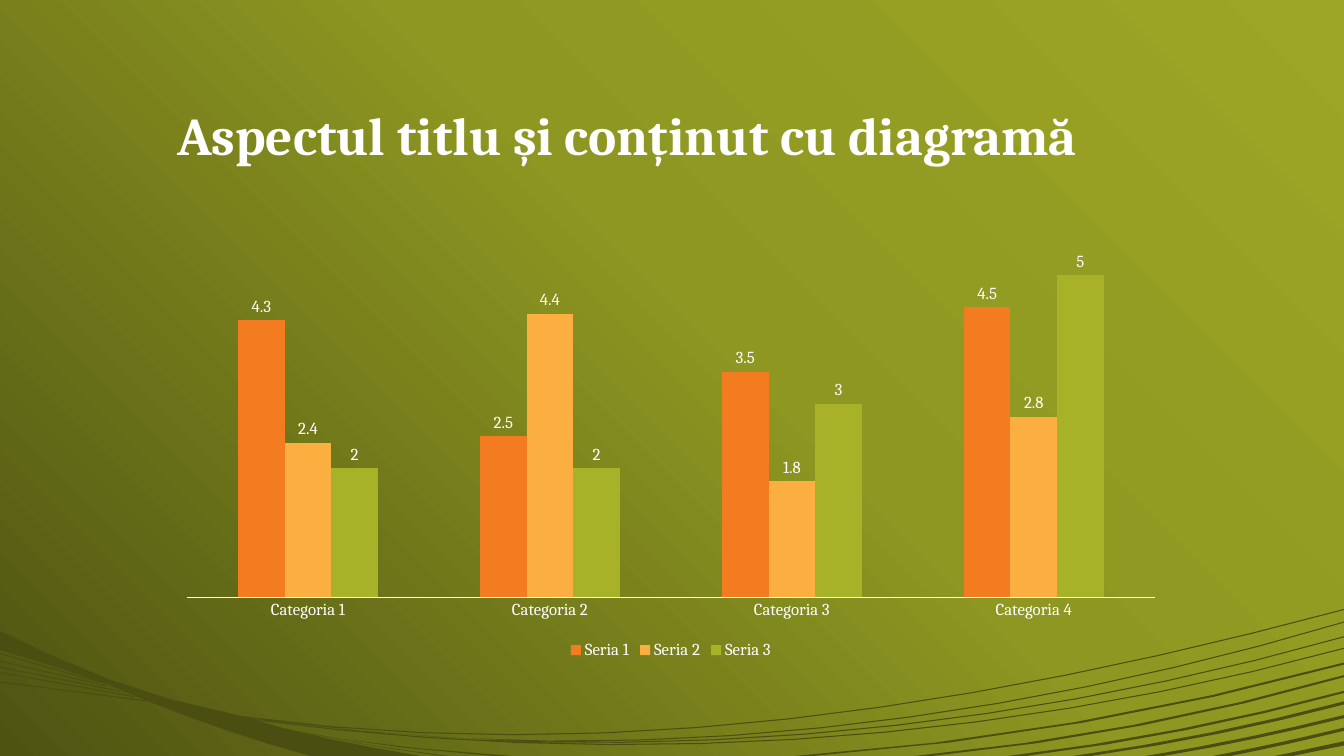
import copy

import pptx
import pptx.chart.data
import pptx.dml.color
import pptx.enum.chart
import pptx.enum.text
import pptx.oxml.ns
import pptx.util

PX = 9525
WIDTH, HEIGHT = 1280, 720
FINE = 100
FONT = "Cambria"
WHITE = "FFFFFF"
WAVE = "4A4E11"
BACKDROP = [(0, "9DA625"), (0.45, "8E9721"), (1, "4E5312")]
CATEGORIES = ["Categoria 1", "Categoria 2", "Categoria 3", "Categoria 4"]
SERIES = [
    ("Seria 1", (4.3, 2.5, 3.5, 4.5), "F37B20"),
    ("Seria 2", (2.4, 4.4, 1.8, 2.8), "FAAF40"),
    ("Seria 3", (2, 2, 3, 5), "A8B228"),
]
CORNER_STRANDS = [(1214, 706, 4), (1155, 693, 3), (1091, 681, 3), (1022, 668, 3),
                  (960, 658, 2), (871, 643, 2), (757, 631, 2)]
LONG_STRANDS = [(230, 682, 580), (265, 687, 592), (248, 685, 606), (235, 684, 617)]
LEFT_STRANDS = [(622, 98, 650), (629, 102, 653), (635, 115, 658), (640, 128, 663), (649, 139, 667)]
LOWER_STRANDS = [(421, 6), (470, 18)]


def rgb(code):
    """Turn a hex string into a colour."""
    return pptx.dml.color.RGBColor.from_string(code)


def px(length):
    """Turn a length in px into EMU."""
    return pptx.util.Emu(length * PX)


def style_font(font, size):
    """Give a font the slide's typeface and colour."""
    font.name = FONT
    font.size = pptx.util.Pt(size)
    font.color.rgb = rgb(WHITE)


def curve(start, first, second, end, steps=4):
    """List the points along a cubic curve."""
    points = []
    for step in range(steps + 1):
        t = step / steps
        weights = ((1 - t) ** 3, 3 * t * (1 - t) ** 2, 3 * t * t * (1 - t), t ** 3)
        points.append(tuple(sum(w * p[axis] for w, p in zip(weights, (start, first, second, end)))
                            for axis in (0, 1)))
    return points


def add_bands(slide, bands):
    """Fill, as one shape, the areas between pairs of edges that run left to right."""
    outlines = [[(x * FINE, y * FINE) for x, y in upper + lower[::-1]] for upper, lower in bands]
    builder = slide.shapes.build_freeform(*outlines[0][0], scale=PX / FINE)
    builder.add_line_segments(outlines[0][1:], close=True)
    for outline in outlines[1:]:
        builder.move_to(*outline[0])
        builder.add_line_segments(outline[1:], close=True)
    wave = builder.convert_to_shape()
    wave.shadow.inherit = False
    wave.fill.solid()
    wave.fill.fore_color.rgb = rgb(WAVE)
    wave.line.fill.background()


def corner_edge(foot, edge):
    """Run a curve from the bottom of the slide up to its right side."""
    run, rise = WIDTH - foot, HEIGHT - edge
    bend = 0.36 - rise / 400
    return curve((foot, HEIGHT), (foot + 0.34 * run, HEIGHT - bend * rise),
                 (foot + 0.68 * run, HEIGHT - (bend + 0.35) * rise), (WIDTH, edge))


def long_edge(x, y, edge):
    """Run a shallow curve from the wedge to the right side."""
    return curve((x, y), (x + 342, y + 47), (x + 696, edge + 95), (WIDTH, edge), steps=12)


def lower_edge(foot):
    """Run a curve from the wedge down to the bottom of the slide."""
    return curve((211, 681), (280, 698), (350, 711), (foot, HEIGHT))


def add_waves(slide):
    """Draw the wedge and the strands along the foot of the slide."""
    strands = [(corner_edge(foot, edge), corner_edge(foot + 17, edge + depth))
               for foot, edge, depth in CORNER_STRANDS]
    strands += [(long_edge(x, y, edge), long_edge(x, y + 1, edge + 1))
                for x, y, edge in LONG_STRANDS]
    strands += [([(0, edge), (x, y)], [(0, edge + 1), (x, y + 1)])
                for edge, x, y in LEFT_STRANDS]
    strands += [(lower_edge(foot + breadth), lower_edge(foot))
                for foot, breadth in LOWER_STRANDS]
    add_bands(slide, strands)
    crest = curve((0, 601), (72, 636), (133, 663), (230, 682))
    crest += curve((230, 682), (280, 698), (340, 710), (401, HEIGHT))[1:]
    base = curve((0, 619), (50, 634), (98, 648), (141, 668))
    base += curve((141, 668), (192, 688), (243, 706), (296, HEIGHT))[1:]
    add_bands(slide, [(crest, base)])


def paint_background(slide):
    """Fill the background with a diagonal three-stop gradient."""
    fill = slide.background.fill
    fill.gradient()
    fill.gradient_angle = 225
    stops = slide.element.find(".//" + pptx.oxml.ns.qn("a:gsLst"))
    stops.append(copy.deepcopy(stops[0]))
    for stop, (position, code) in zip(fill.gradient_stops, BACKDROP):
        stop.position = position
        stop.color.rgb = rgb(code)


def place_title(slide, left, top, width, height):
    """Set the title into its box."""
    title = slide.shapes.title
    title.left, title.top, title.width, title.height = map(px, (left, top, width, height))
    frame = title.text_frame
    frame.text = "Aspectul titlu și conținut cu diagramă"
    frame.word_wrap = True
    frame.auto_size = pptx.enum.text.MSO_AUTO_SIZE.NONE
    frame.vertical_anchor = pptx.enum.text.MSO_ANCHOR.BOTTOM
    heading = frame.paragraphs[0]
    heading.alignment = pptx.enum.text.PP_ALIGN.LEFT
    heading.line_spacing = 0.9
    style_font(heading.font, 38)
    heading.font.bold = True


def place_chart(slide, left, top, width, height):
    """Draw the clustered columns in their box."""
    data = pptx.chart.data.CategoryChartData()
    data.categories = CATEGORIES
    for name, values, _ in SERIES:
        data.add_series(name, values)
    chart = slide.shapes.add_chart(pptx.enum.chart.XL_CHART_TYPE.COLUMN_CLUSTERED,
                                   *map(px, (left, top, width, height)), data).chart
    style_font(chart.font, 10)
    chart.has_title = False
    chart.has_legend = True
    chart.legend.position = pptx.enum.chart.XL_LEGEND_POSITION.BOTTOM
    chart.legend.include_in_layout = False
    style_font(chart.legend.font, 12)

    scale = chart.value_axis
    scale.visible = False
    scale.has_major_gridlines = False
    scale.minimum_scale, scale.maximum_scale = 0, 6
    base = chart.category_axis
    base.major_tick_mark = pptx.enum.chart.XL_TICK_MARK.NONE
    base.format.line.color.rgb = rgb(WHITE)
    base.format.line.width = pptx.util.Pt(0.75)
    style_font(base.tick_labels.font, 12)

    columns = chart.plots[0]
    columns.gap_width = 219
    columns.overlap = 0
    columns.vary_by_categories = False
    for series, (_, _, code) in zip(columns.series, SERIES):
        series.format.fill.solid()
        series.format.fill.fore_color.rgb = rgb(code)
        labels = series.data_labels
        labels.show_value = True
        labels.position = pptx.enum.chart.XL_LABEL_POSITION.OUTSIDE_END
        style_font(labels.font, 12)


def main():
    """Build and save the slide."""
    deck = pptx.Presentation()
    deck.slide_width, deck.slide_height = px(WIDTH), px(HEIGHT)
    slide = deck.slides.add_slide(deck.slide_layouts[5])
    paint_background(slide)
    add_waves(slide)
    place_title(slide, 159, 42, 960, 122)
    place_chart(slide, 159, 192, 960, 440)
    deck.save("out.pptx")


if __name__ == "__main__":
    main()
